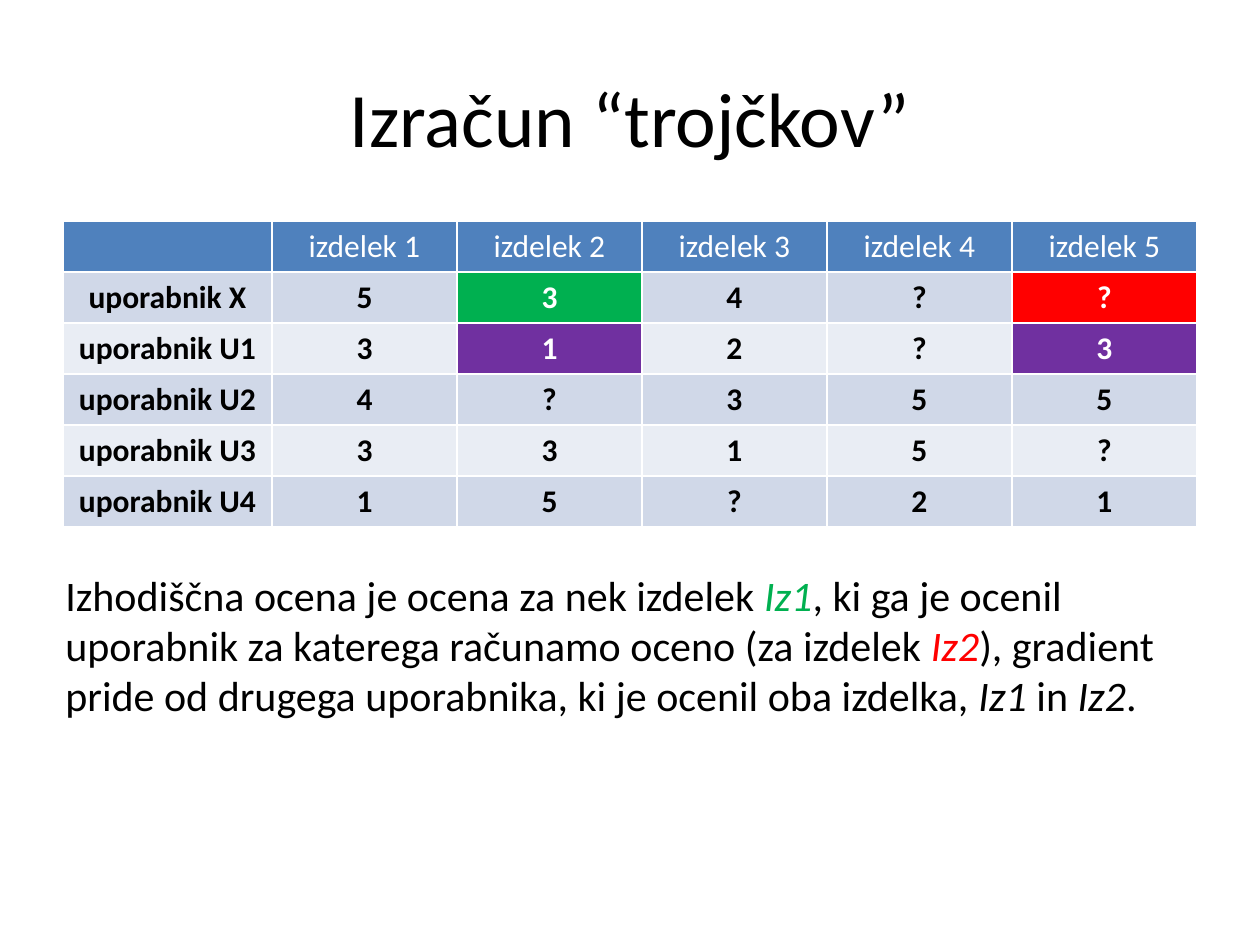
from pptx import Presentation
from pptx.dml.color import RGBColor
from pptx.enum.text import MSO_ANCHOR, PP_ALIGN
from pptx.util import Pt

EMU_PER_INCH, PX_PER_INCH = 914400, 126
CENTER, MIDDLE, TOP = PP_ALIGN.CENTER, MSO_ANCHOR.MIDDLE, MSO_ANCHOR.TOP
FONT = "Calibri"

BLACK = RGBColor(0x00, 0x00, 0x00)
WHITE = RGBColor(0xFF, 0xFF, 0xFF)
BLUE = RGBColor(0x4F, 0x81, 0xBD)
BAND_DARK = RGBColor(0xD0, 0xD8, 0xE8)
BAND_LIGHT = RGBColor(0xE9, 0xED, 0xF4)
GREEN = RGBColor(0x00, 0xB0, 0x50)
RED = RGBColor(0xFF, 0x00, 0x00)
PURPLE = RGBColor(0x70, 0x30, 0xA0)

TITLE = "Izračun “trojčkov”"
RATINGS = [
    ["", "izdelek 1", "izdelek 2", "izdelek 3", "izdelek 4", "izdelek 5"],
    ["uporabnik X", "5", "3", "4", "?", "?"],
    ["uporabnik U1", "3", "1", "2", "?", "3"],
    ["uporabnik U2", "4", "?", "3", "5", "5"],
    ["uporabnik U3", "3", "3", "1", "5", "?"],
    ["uporabnik U4", "1", "5", "?", "2", "1"],
]
# (row, column) of the cells that make up the triplet and the wanted rating
HIGHLIGHTS = {(1, 2): GREEN, (1, 5): RED, (2, 2): PURPLE, (2, 5): PURPLE}
# text, colour, italic
EXPLANATION = [
    ("Izhodiščna ocena je ocena za nek izdelek ", BLACK, False),
    ("Iz1", GREEN, True),
    (", ki ga je ocenil uporabnik za katerega računamo oceno (za izdelek ", BLACK, False),
    ("Iz2", RED, True),
    ("), gradient pride od drugega uporabnika, ki je ocenil oba izdelka, ", BLACK, False),
    ("Iz1", BLACK, True),
    (" in ", BLACK, False),
    ("Iz2", BLACK, True),
    (".", BLACK, False),
]


def px(n):
    return round(n * EMU_PER_INCH / PX_PER_INCH)


def format_font(font, size, color, bold=False, italic=False):
    font.name = FONT
    font.size = Pt(size)
    font.color.rgb = color
    font.bold = bold
    font.italic = italic


def add_text(slide, box, runs, size, align=None, anchor=TOP):
    """Place one wrapped paragraph made of (text, colour, italic) runs."""
    tf = slide.shapes.add_textbox(*map(px, box)).text_frame
    tf.word_wrap = True
    tf.vertical_anchor = anchor
    p = tf.paragraphs[0]
    p.alignment = align
    for text, color, italic in runs:
        r = p.add_run()
        r.text = text
        format_font(r.font, size, color, italic=italic)


def add_ratings(slide, box, label_width):
    """Fill the box with the table; product columns share what the labels leave."""
    left, top, width, height = box
    rows, cols = len(RATINGS), len(RATINGS[0])
    table = slide.shapes.add_table(rows, cols, *map(px, box)).table
    for c, column in enumerate(table.columns):
        column.width = px((width - label_width) // (cols - 1) if c else label_width)
    for r, values in enumerate(RATINGS):
        table.rows[r].height = px(height // rows)
        band = BAND_DARK if r % 2 else BAND_LIGHT
        for c, value in enumerate(values):
            cell = table.cell(r, c)
            highlight = HIGHLIGHTS.get((r, c))
            cell.fill.solid()
            cell.fill.fore_color.rgb = highlight or (band if r else BLUE)
            cell.text = value
            p = cell.text_frame.paragraphs[0]
            p.alignment = CENTER
            color = WHITE if highlight or r == 0 else BLACK
            for run in p.runs:
                format_font(run.font, 18, color, bold=r > 0)


def main():
    prs = Presentation()
    prs.slide_width, prs.slide_height = px(1260), px(945)
    slide = prs.slides.add_slide(prs.slide_layouts[6])
    add_text(slide, (63, 38, 1134, 158), [(TITLE, BLACK, False)], 44, CENTER, MIDDLE)
    add_ratings(slide, (63, 221, 1134, 306), label_width=209)
    add_text(slide, (53, 563, 1134, 165), EXPLANATION, 24)
    prs.save("out.pptx")


if __name__ == "__main__":
    main()
